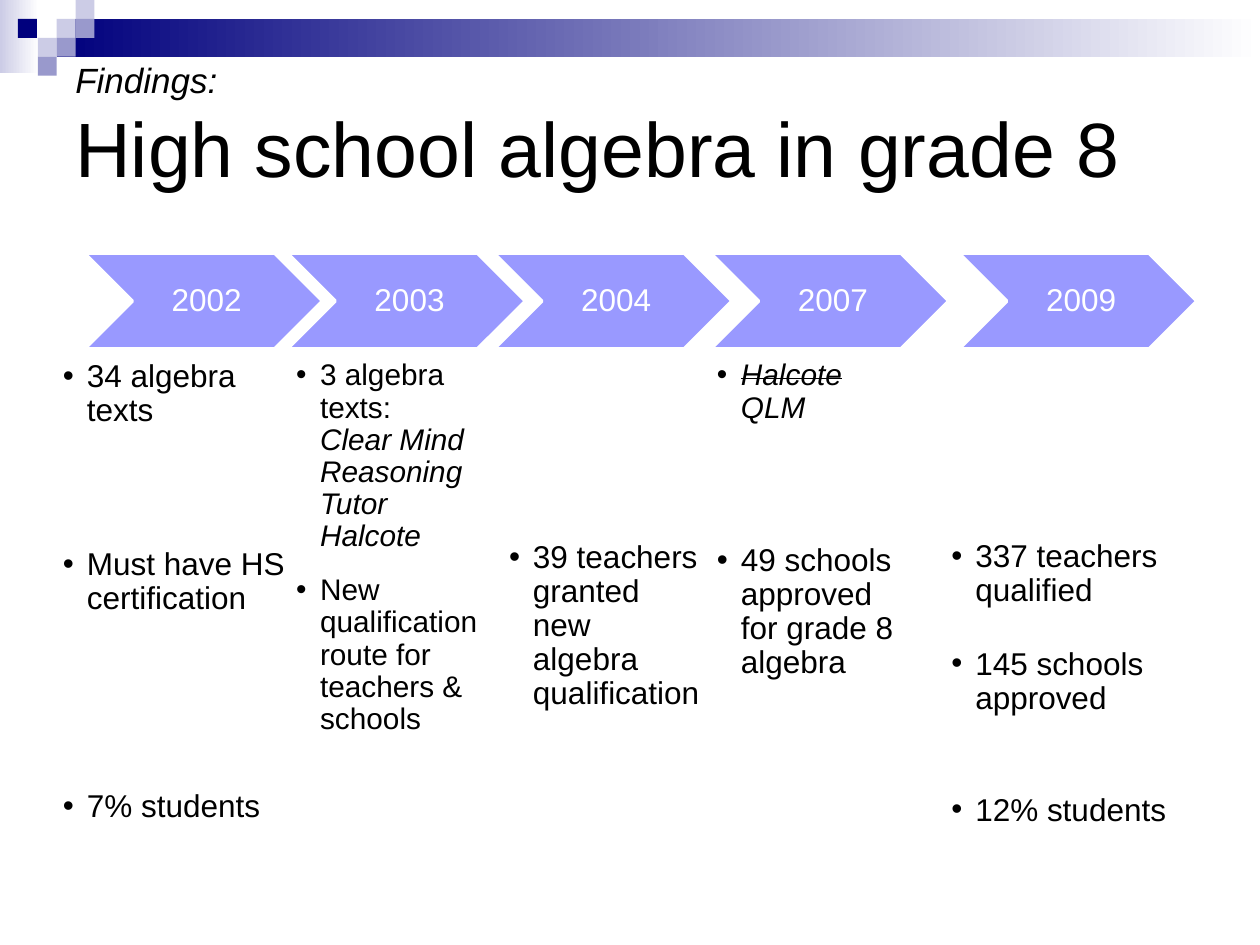
from lxml import etree
from pptx import Presentation
from pptx.dml.color import RGBColor
from pptx.enum import shapes, text
from pptx.oxml.ns import qn
from pptx.util import Inches, Pt

BLACK = RGBColor(0x00, 0x00, 0x00)
WHITE = RGBColor(0xFF, 0xFF, 0xFF)
NAVY = RGBColor(0x00, 0x00, 0x7D)
LAVENDER = RGBColor(0xCC, 0xCC, 0xE6)
VIOLET = RGBColor(0x99, 0x99, 0xCC)
PERIWINKLE = RGBColor(0x99, 0x99, 0xFF)

FONT = "Arial"
INDENT = 0.19
BLOCK_TOP = 2.01
CHEVRON_WIDTH, CHEVRON_HEIGHT = 1.89, 0.76
NOTES_TOP, NOTES_HEIGHT = 2.86, 4.47

# Each bullet: gap above in points, then its lines as (text, format).
STAGES = [
    dict(year="2002", left=0.67, notes_left=0.5, notes_width=1.8, bullets=[
        (0, [("34 algebra texts", {})]),
        (68.5, [("Must have HS certification", {})]),
        (99.5, [("7% students", {})])]),
    dict(year="2003", left=2.28, notes_left=2.35, notes_width=1.77, bullets=[
        (0, [("3 algebra texts:", {"size": 17}),
             ("Clear Mind", {"size": 17, "italic": True}),
             ("Reasoning Tutor", {"size": 17, "italic": True}),
             ("Halcote", {"size": 17, "italic": True})]),
        (12.5, [("New qualification route for teachers & schools", {"size": 17})])]),
    dict(year="2004", left=3.92, notes_left=4.04, notes_width=1.54, inset=1.52, bullets=[
        (0, [("39 teachers granted new algebra qualification", {})])]),
    dict(year="2007", left=5.64, notes_left=5.69, notes_width=1.51, bullets=[
        (0, [("Halcote", {"size": 17, "italic": True, "strike": True}),
             ("QLM", {"size": 17, "italic": True})]),
        (68.5, [("49 schools approved for grade 8 algebra", {})])]),
    dict(year="2009", left=7.61, notes_left=7.55, notes_width=1.95, inset=1.43, bullets=[
        (0, [("337 teachers qualified", {})]),
        (22.5, [("145 schools approved", {})]),
        (44.5, [("12% students", {})])]),
]


def add_text(paragraph, content, size=18, color=BLACK, italic=False, strike=False):
    run = paragraph.add_run()
    run.text = content
    font = run.font
    font.name, font.size, font.italic = FONT, Pt(size), italic
    font.color.rgb = color
    if strike:
        font._element.set("strike", "sngStrike")


def add_lines(paragraph, lines):
    for index, (content, style) in enumerate(lines):
        if index:
            paragraph.add_line_break()
        add_text(paragraph, content, **style)


def add_shape(slide, kind, left, top, width, height):
    shape = slide.shapes.add_shape(
        kind, Inches(left), Inches(top), Inches(width), Inches(height))
    shape.shadow.inherit = False
    shape.line.fill.background()
    return shape


def add_text_frame(slide, left, top, width, height):
    box = slide.shapes.add_textbox(
        Inches(left), Inches(top), Inches(width), Inches(height))
    box.text_frame.word_wrap = True
    return box.text_frame


def set_insets(frame, left, top, right, bottom):
    frame.margin_left, frame.margin_top = Inches(left), Inches(top)
    frame.margin_right, frame.margin_bottom = Inches(right), Inches(bottom)


def set_bullet(paragraph):
    properties = paragraph._p.get_or_add_pPr()
    properties.set("marL", str(Inches(INDENT)))
    properties.set("indent", str(-Inches(INDENT)))
    etree.SubElement(properties, qn("a:buFont")).set("typeface", FONT)
    etree.SubElement(properties, qn("a:buChar")).set("char", "•")


def add_fade(slide, left, top, width, height, color):
    """Band that fades from the colour to white, left to right."""
    band = add_shape(slide, shapes.MSO_SHAPE.RECTANGLE, left, top, width, height)
    band.fill.gradient()
    band.fill.gradient_angle = 0
    for stop, position, stop_color in zip(
            band.fill.gradient_stops, (0, 1), (color, WHITE)):
        stop.position = position
        stop.color.rgb = stop_color


def add_banner(slide, left, top, width):
    unit = 0.15
    add_fade(slide, left, top, 0.31, 0.58, LAVENDER)
    add_fade(slide, left + 3 * unit, top + unit, width - 3 * unit, 0.3, NAVY)
    squares = [(3, 1, LAVENDER), (4, 0, LAVENDER), (4, 1, VIOLET), (2, 2, LAVENDER),
               (0.95, 1, NAVY), (3, 2, VIOLET), (2, 3, VIOLET)]
    for column, row, color in squares:
        square = add_shape(slide, shapes.MSO_SHAPE.RECTANGLE,
                           left + column * unit, top + row * unit, unit, unit)
        square.fill.solid()
        square.fill.fore_color.rgb = color


def add_title(slide, left, top, width, height):
    frame = add_text_frame(slide, left, top, width, height)
    frame.vertical_anchor = text.MSO_ANCHOR.MIDDLE
    add_lines(frame.paragraphs[0], [
        ("Findings:", {"size": 20, "italic": True}),
        ("High school algebra in grade 8", {"size": 44})])


def add_chevron(slide, left, top, width, height, year):
    chevron = add_shape(slide, shapes.MSO_SHAPE.CHEVRON, left, top, width, height)
    chevron.fill.solid()
    chevron.fill.fore_color.rgb = PERIWINKLE
    chevron.line.color.rgb = WHITE
    chevron.line.width = Pt(2)
    frame = chevron.text_frame
    set_insets(frame, 0.08, 0.03, 0.03, 0.03)
    frame.vertical_anchor = text.MSO_ANCHOR.MIDDLE
    paragraph = frame.paragraphs[0]
    paragraph.alignment = text.PP_ALIGN.CENTER
    paragraph.line_spacing = 0.9
    add_text(paragraph, year, color=WHITE)


def add_notes(slide, left, top, width, height, bullets, inset=0):
    frame = add_text_frame(slide, left, top, width, height)
    set_insets(frame, 0, inset, 0, 0)
    for index, (gap, lines) in enumerate(bullets):
        paragraph = frame.add_paragraph() if index else frame.paragraphs[0]
        paragraph.line_spacing = 0.9
        paragraph.space_before = Pt(gap)
        set_bullet(paragraph)
        add_lines(paragraph, lines)


def main():
    presentation = Presentation()
    presentation.slide_width, presentation.slide_height = Inches(10), Inches(7.5)
    slide = presentation.slides.add_slide(presentation.slide_layouts[6])
    add_banner(slide, 0, 0, 10)
    for stage in STAGES:
        add_chevron(slide, stage["left"], BLOCK_TOP,
                    CHEVRON_WIDTH, CHEVRON_HEIGHT, stage["year"])
        add_notes(slide, stage["notes_left"], NOTES_TOP, stage["notes_width"],
                  NOTES_HEIGHT, stage["bullets"], stage.get("inset", 0))
    add_title(slide, 0.5, 0.25, 9, 1.5)
    presentation.save("out.pptx")


if __name__ == "__main__":
    main()
